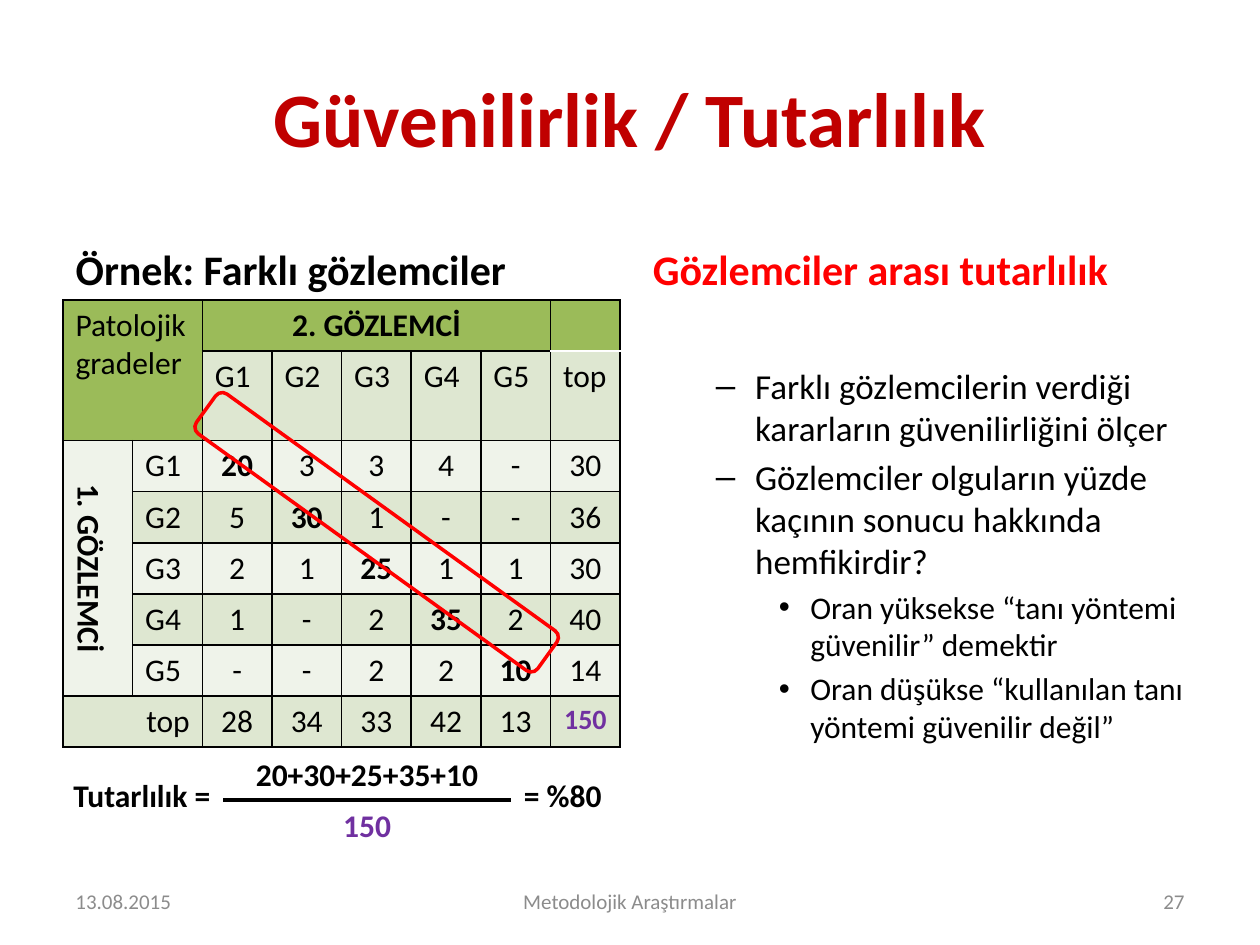
"""Build the slide on agreement between two observers."""
from lxml import etree
from pptx import Presentation
from pptx.dml.color import RGBColor
from pptx.enum import shapes, text
from pptx.oxml import ns
from pptx.util import Pt

BLACK = RGBColor(0, 0, 0)
DARK = RGBColor(0xC0, 0, 0)
RED = RGBColor(0xFF, 0, 0)
PURPLE = RGBColor(0x70, 0x30, 0xA0)
GRAY = RGBColor(0x8C, 0x8C, 0x8C)
GREEN = RGBColor(0x9B, 0xBB, 0x59)
MID = RGBColor(0xDE, 0xE7, 0xD1)
PALE = RGBColor(0xEF, 0xF3, 0xEA)
FONT = "Calibri"
LEFT, CENTER, RIGHT = text.PP_ALIGN.LEFT, text.PP_ALIGN.CENTER, text.PP_ALIGN.RIGHT
MIDDLE, BOTTOM = text.MSO_ANCHOR.MIDDLE, text.MSO_ANCHOR.BOTTOM

GRADES = ["G1", "G2", "G3", "G4", "G5"]
SCORES = [
    ["20", "3", "3", "4", "-", "30"],
    ["5", "30", "1", "-", "-", "36"],
    ["2", "1", "25", "1", "1", "30"],
    ["1", "-", "2", "35", "2", "40"],
    ["-", "-", "2", "2", "10", "14"],
]
TOTALS = ["28", "34", "33", "42", "13"]
POINTS = [
    (1, 20, "Farklı gözlemcilerin verdiği kararların güvenilirliğini ölçer"),
    (1, 20, "Gözlemciler olguların yüzde kaçının sonucu hakkında hemfikirdir?"),
    (2, 18, "Oran yüksekse “tanı yöntemi güvenilir” demektir"),
    (2, 18, "Oran düşükse “kullanılan tanı yöntemi güvenilir değil”"),
]


def write(para, words, size, color=BLACK, bold=False, align=LEFT):
    """Add one formatted run to a paragraph."""
    para.alignment = align
    run = para.add_run()
    run.text = words
    font = run.font
    font.name, font.size, font.bold = FONT, Pt(size), bold
    font.color.rgb = color


def place(shape, left, top, width, height):
    """Move and size a shape, in points."""
    shape.left, shape.top = Pt(left), Pt(top)
    shape.width, shape.height = Pt(width), Pt(height)


def head(shape, box, words, size, color, align=LEFT, anchor=BOTTOM):
    """Fill a title or heading placeholder."""
    place(shape, *box)
    frame = shape.text_frame
    frame.auto_size = text.MSO_AUTO_SIZE.NONE
    frame.vertical_anchor = anchor
    para = frame.paragraphs[0]
    para.space_before = Pt(0)
    write(para, words, size, color, True, align)


def points(shape, box):
    """Fill the body placeholder with the bulleted points."""
    place(shape, *box)
    frame = shape.text_frame
    frame.auto_size = text.MSO_AUTO_SIZE.NONE
    for i, (level, size, words) in enumerate(POINTS):
        para = frame.add_paragraph() if i else frame.paragraphs[0]
        para.level = level
        para.space_before = Pt(size * 0.2 if i else 0)
        write(para, words, size)


def label(slide, box, words, size=18, color=BLACK, bold=True, align=CENTER, anchor=None):
    """Add a one-line text box."""
    shape = slide.shapes.add_textbox(*map(Pt, box))
    frame = shape.text_frame
    frame.word_wrap = True
    frame.vertical_anchor = anchor
    write(frame.paragraphs[0], words, size, color, bold, align)


def edge(cell, sides):
    """Draw thin black borders on the given sides of a cell."""
    props = cell._tc.get_or_add_tcPr()
    for i, side in enumerate(s for s in "LRTB" if s in sides):
        line = etree.Element(ns.qn("a:ln" + side), w=str(Pt(1)))
        fill = etree.SubElement(line, ns.qn("a:solidFill"))
        etree.SubElement(fill, ns.qn("a:srgbClr"), val=str(BLACK))
        props.insert(i, line)


def grid(slide):
    """Add the cross table of both observers' grades."""
    table = slide.shapes.add_table(8, 8, *map(Pt, (36, 171.4, 318.4, 233.6))).table
    table.first_row = table.horz_banding = False
    for col in table.columns:
        col.width = Pt(39.8)
    for row in table.rows:
        row.height = Pt(29.2)
    for r in range(8):
        for c in range(8):
            cell = table.cell(r, c)
            cell.fill.solid()
            green = r == 0 or (r == 1 and c < 2)
            band = PALE if r in (2, 4, 6) else MID
            cell.fill.fore_color.rgb = GREEN if green else band
            edge(cell, {(0, 7): "LRT", (1, 7): "LRB"}.get((r, c), "LRTB"))

    def put(r, c, words, align=CENTER, bold=False, size=18, color=BLACK):
        para = table.cell(r, c).text_frame.paragraphs[0]
        write(para, words, size, color, bold, align)

    for first, last in [((0, 0), (1, 1)), ((0, 2), (0, 6)), ((2, 0), (6, 0)), ((7, 0), (7, 1))]:
        table.cell(*first).merge(table.cell(*last))
    put(0, 0, "Patolojik", LEFT)
    write(table.cell(0, 0).text_frame.add_paragraph(), "gradeler", 18)
    put(0, 2, "2. GÖZLEMCİ", bold=True)
    put(2, 0, "1. GÖZLEMCİ", bold=True)
    side = table.cell(2, 0)
    side.vertical_anchor = MIDDLE
    side._tc.get_or_add_tcPr().set("vert", "vert")
    for c, name in enumerate(GRADES + ["top"], 2):
        put(1, c, name, LEFT)
    for i, (name, row) in enumerate(zip(GRADES, SCORES)):
        put(i + 2, 1, name, LEFT)
        for j, score in enumerate(row):
            put(i + 2, j + 2, score, bold=i == j)
    put(7, 0, "top", RIGHT)
    for c, total in enumerate(TOTALS, 2):
        put(7, c, total)
    put(7, 7, "150", bold=True, size=16, color=PURPLE)


def ring(slide):
    """Outline the diagonal of agreeing grades."""
    kind = shapes.MSO_SHAPE.ROUNDED_RECTANGLE
    shape = slide.shapes.add_shape(kind, *map(Pt, (95, 290.2, 240.5, 28)))
    shape.rotation = 35.8
    shape.shadow.inherit = False
    shape.fill.background()
    shape.line.color.rgb = RED
    shape.line.width = Pt(2)


def ratio(slide):
    """Write the agreement ratio as a fraction."""
    kind = shapes.MSO_CONNECTOR.STRAIGHT
    bar = slide.shapes.add_connector(kind, *map(Pt, (127.5, 457.2, 292.3, 457.2)))
    bar.line.color.rgb = BLACK
    bar.line.width = Pt(2.25)
    etree.SubElement(bar._element.spPr, ns.qn("a:effectLst"))
    label(slide, (14.4, 440, 113, 29), "Tutarlılık =", align=RIGHT)
    label(slide, (127.5, 428, 164.5, 29), "20+30+25+35+10")
    label(slide, (127.5, 457.2, 164.5, 29), "150", color=PURPLE)
    label(slide, (292.3, 440, 73.5, 29), "= %80", align=LEFT)


def main():
    """Build and save the slide."""
    deck = Presentation()
    deck.slide_width, deck.slide_height = Pt(720), Pt(540)
    slide = deck.slides.add_slide(deck.slide_layouts[4])
    holders = slide.placeholders
    spare = holders[2]._element
    spare.getparent().remove(spare)
    head(holders[0], (36, 21.6, 648, 90), "Güvenilirlik / Tutarlılık", 44, DARK, CENTER, MIDDLE)
    head(holders[1], (36, 121, 318.2, 50.4), "Örnek: Farklı gözlemciler", 24, BLACK)
    head(holders[3], (365.8, 121, 318.2, 50.4), "Gözlemciler arası tutarlılık", 24, RED)
    points(holders[4], (365.8, 204.5, 318.2, 278))
    grid(slide)
    for left, width, words, align in [
        (36, 168, "13.08.2015", LEFT),
        (246, 228, "Metodolojik Araştırmalar", CENTER),
        (516, 168, "27", RIGHT),
    ]:
        label(slide, (left, 500.5, width, 28.8), words, 12, GRAY, False, align, MIDDLE)
    ring(slide)
    ratio(slide)
    deck.save("out.pptx")


if __name__ == "__main__":
    main()
